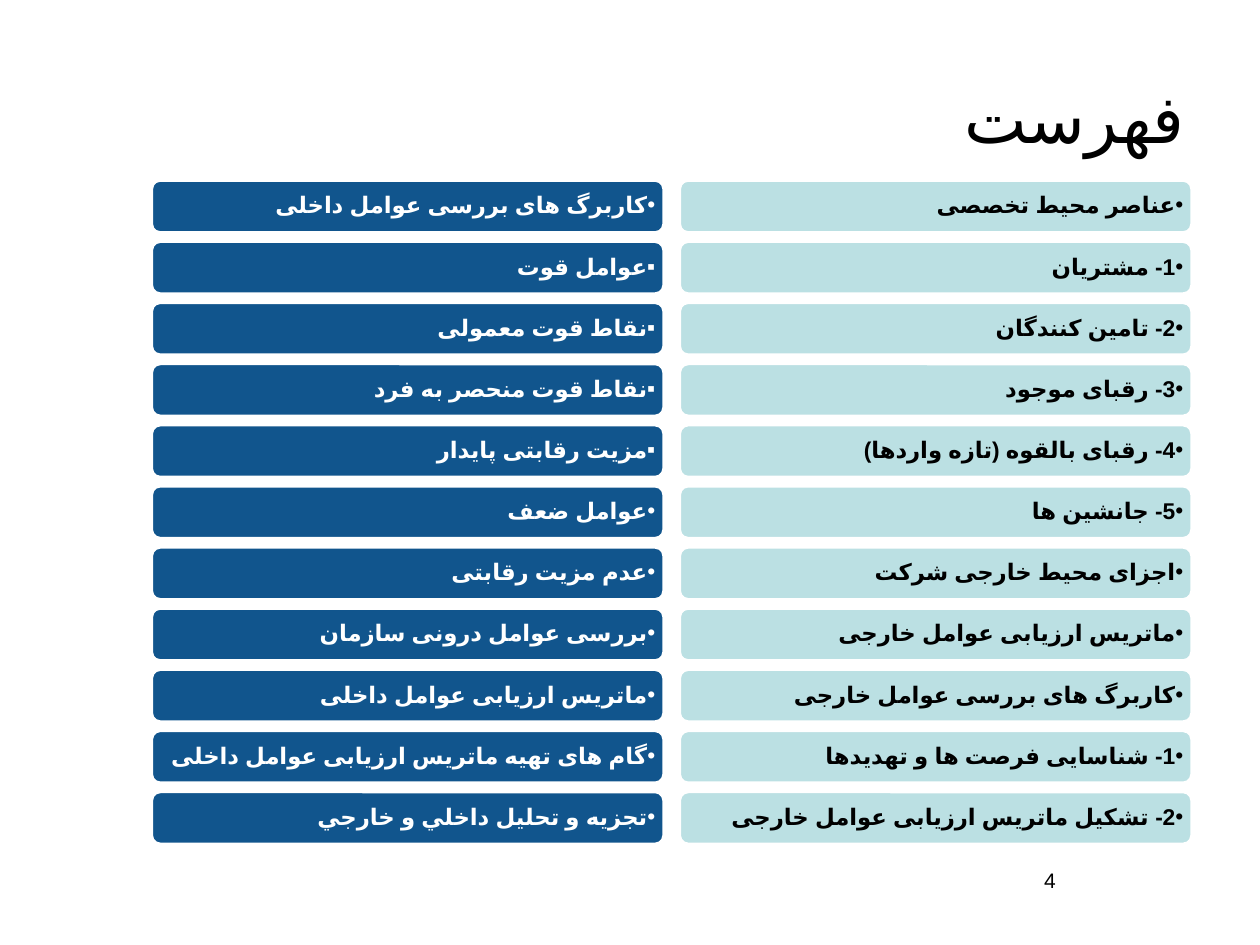
import dataclasses

import pptx
import pptx.dml.color
import pptx.enum.shapes
import pptx.enum.text
import pptx.util
from lxml import etree
from pptx.oxml.ns import qn

Pt = pptx.util.Pt
ALIGN = pptx.enum.text.PP_ALIGN
ANCHOR = pptx.enum.text.MSO_ANCHOR


@dataclasses.dataclass(frozen=True)
class Theme:
    black: str = "000000"
    white: str = "FFFFFF"
    pale: str = "BBE0E3"
    navy: str = "11558D"
    title_size: float = 38
    item_size: float = 13
    number_size: float = 12
    title_font: str = "Arial"
    body_font: str = "Calibri"
    arabic_font: str = "Arial"
    language: str = "fa-IR"


def rgb(value):
    return pptx.dml.color.RGBColor.from_string(value)


def write_text(frame, text, *, size, font, arabic_font, language, color, align,
               bold=False, bullet=None, spacing=None, anchor=ANCHOR.TOP, inset=None):
    """Put one right-to-left paragraph into a text frame."""
    frame.word_wrap = True
    frame.vertical_anchor = anchor
    if inset is not None:
        frame.margin_left = frame.margin_right = Pt(inset)
        frame.margin_top = frame.margin_bottom = Pt(inset)
    para = frame.paragraphs[0]
    para.alignment = align
    if spacing:
        para.line_spacing = spacing
    properties = para._p.get_or_add_pPr()
    properties.set("rtl", "1")
    if bullet:
        properties.set("marL", "0")
        properties.set("indent", "0")
        etree.SubElement(properties, qn("a:buFont")).set("typeface", arabic_font)
        etree.SubElement(properties, qn("a:buChar")).set("char", bullet)
    span = para.add_run()
    span.text = text
    span.font.size = Pt(size)
    span.font.name = font
    span.font.bold = bold
    span.font.color.rgb = rgb(color)
    run_properties = span._r.get_or_add_rPr()
    run_properties.set("lang", language)
    etree.SubElement(run_properties, qn("a:cs")).set("typeface", arabic_font)


class Builder:
    def __init__(self, page, theme):
        self.page = page
        self.theme = theme

    def label(self, text, left, top, width, height, **style):
        theme = self.theme
        box = self.page.shapes.add_textbox(Pt(left), Pt(top), Pt(width), Pt(height))
        write_text(box.text_frame, text, color=theme.black, language=theme.language,
                   arabic_font=theme.arabic_font, **style)

    def bar(self, group, text, bullet, left, top, width, height, fill, color):
        theme = self.theme
        box = group.shapes.add_shape(pptx.enum.shapes.MSO_SHAPE.ROUNDED_RECTANGLE,
                                     Pt(left), Pt(top), Pt(width), Pt(height))
        box.shadow.inherit = False
        box.fill.solid()
        box.fill.fore_color.rgb = rgb(fill)
        box.line.color.rgb = rgb(theme.white)
        box.line.width = Pt(2)
        write_text(box.text_frame, text, size=theme.item_size, font=theme.body_font,
                   arabic_font=theme.arabic_font, language=theme.language, color=color,
                   align=ALIGN.RIGHT, bold=True, bullet=bullet, spacing=0.9,
                   anchor=ANCHOR.MIDDLE, inset=3.6)

    def column(self, items, left, fill, color, square_rows=()):
        top, pitch, width, height = 102.9, 34.94, 293, 30.2
        group = self.page.shapes.add_group_shape()
        for row, text in enumerate(items):
            bullet = "▪" if row in square_rows else "•"
            self.bar(group, text, bullet, left, top + row * pitch, width, height, fill, color)


EXTERNAL_TOPICS = [
    "عناصر محیط تخصصی",
    "1- مشتریان",
    "2- تامین کنندگان",
    "3- رقبای موجود",
    "4- رقبای بالقوه (تازه واردها)",
    "5- جانشین ها",
    "اجزای محیط خارجی شرکت",
    "ماتریس ارزیابی عوامل خارجی",
    "کاربرگ های بررسی عوامل خارجی",
    "1- شناسایی فرصت ها و تهدیدها",
    "2- تشکیل ماتریس ارزیابی عوامل خارجی",
]
INTERNAL_TOPICS = [
    "کاربرگ های بررسی عوامل داخلی",
    "عوامل قوت",
    "نقاط قوت معمولی",
    "نقاط قوت منحصر به فرد",
    "مزیت رقابتی پایدار",
    "عوامل ضعف",
    "عدم مزیت رقابتی",
    "بررسی عوامل درونی سازمان",
    "ماتریس ارزیابی عوامل داخلی",
    "گام های تهیه ماتریس ارزیابی عوامل داخلی",
    "تجزيه و تحليل داخلي و خارجي",
]


def main():
    deck = pptx.Presentation()
    deck.slide_width, deck.slide_height = Pt(720), Pt(540)
    theme = Theme()
    builder = Builder(deck.slides.add_slide(deck.slide_layouts[6]), theme)

    # Title and page number
    builder.label("فهرست", 36, 21.6, 648, 90, size=theme.title_size,
                  font=theme.title_font, align=ALIGN.RIGHT, anchor=ANCHOR.MIDDLE)
    builder.label("4", 516, 492, 168, 37.5, size=theme.number_size,
                  font=theme.body_font, align=ALIGN.CENTER)

    # Two columns of topics
    builder.column(EXTERNAL_TOPICS, 388.2, theme.pale, theme.black)
    builder.column(INTERNAL_TOPICS, 86.5, theme.navy, theme.white, square_rows=range(1, 5))

    deck.save("out.pptx")


if __name__ == "__main__":
    main()
